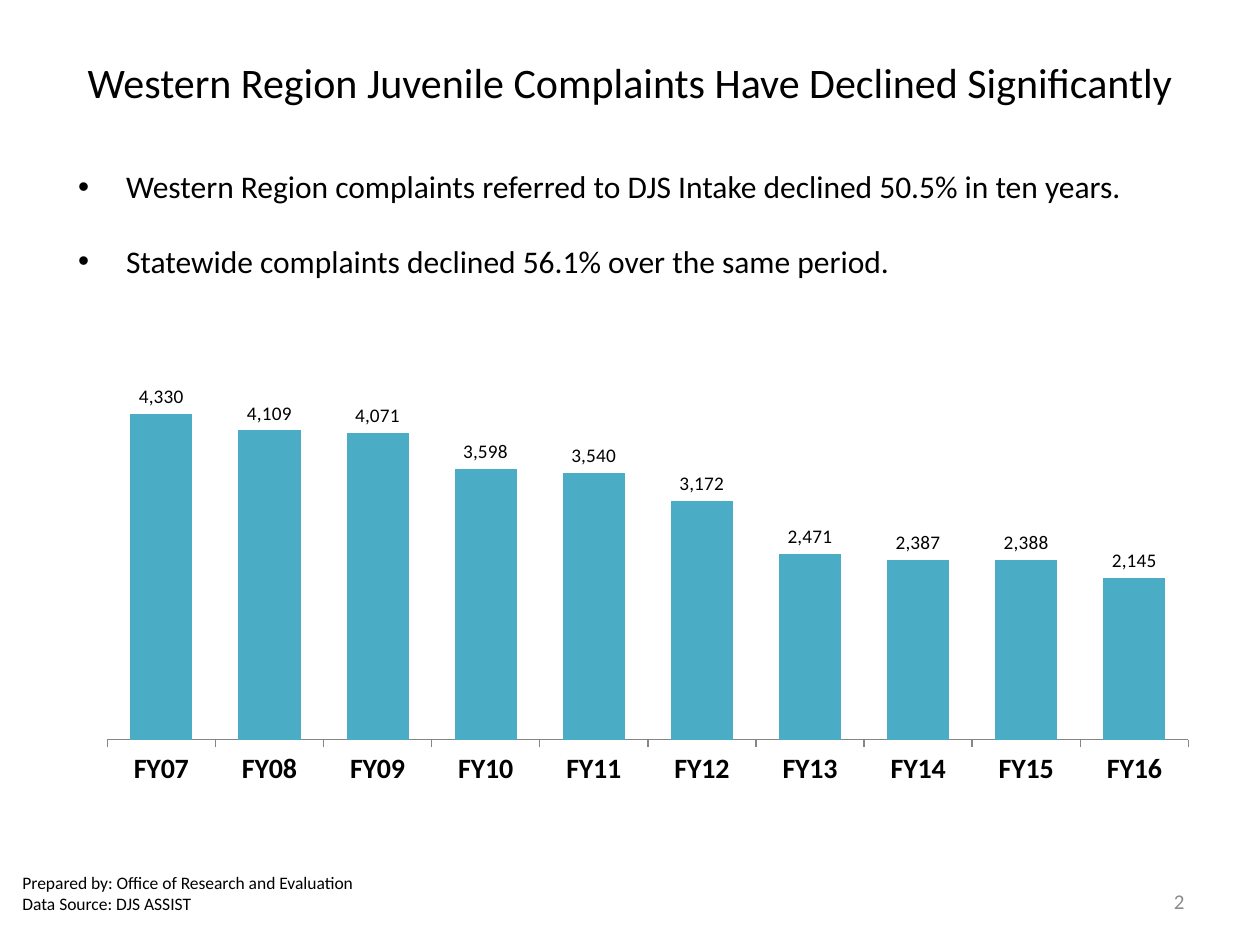
from dataclasses import dataclass

from pptx import Presentation
from pptx.chart.data import CategoryChartData
from pptx.dml.color import RGBColor
from pptx.enum.chart import XL_CHART_TYPE, XL_LABEL_POSITION, XL_TICK_LABEL_POSITION, XL_TICK_MARK
from pptx.enum.text import MSO_ANCHOR, MSO_AUTO_SIZE, PP_ALIGN
from pptx.oxml import parse_xml
from pptx.oxml.ns import nsdecls
from pptx.util import Inches, Pt

COLUMN = XL_CHART_TYPE.COLUMN_CLUSTERED
OUTSIDE_END = XL_LABEL_POSITION.OUTSIDE_END
TICK_OUT, TICK_NONE = XL_TICK_MARK.OUTSIDE, XL_TICK_MARK.NONE
LABELS_LOW = XL_TICK_LABEL_POSITION.LOW
MIDDLE = MSO_ANCHOR.MIDDLE
NO_FIT = MSO_AUTO_SIZE.NONE
LEFT, CENTER, RIGHT = PP_ALIGN.LEFT, PP_ALIGN.CENTER, PP_ALIGN.RIGHT

WIDTH, HEIGHT = Inches(10), Inches(7.5)
FONT = "Calibri"
COLORS = {"text": "000000", "number": "8C8C8C", "bar": "4BACC6", "axis": "868686"}
NUMBER_FORMAT = '_(* #,##0_);_(* \\(#,##0\\);_(* "-"??_);_('
COMPLAINTS = {
    "FY16": 2145, "FY15": 2388, "FY14": 2387, "FY13": 2471, "FY12": 3172,
    "FY11": 3540, "FY10": 3598, "FY09": 4071, "FY08": 4109, "FY07": 4330,
}


@dataclass(frozen=True)
class Area:
    """Left, top, width and height as shares of the slide's size."""
    x: float
    y: float
    w: float
    h: float

    def box(self) -> tuple[int, int, int, int]:
        return (int(self.x * WIDTH), int(self.y * HEIGHT),
                int(self.w * WIDTH), int(self.h * HEIGHT))


@dataclass(frozen=True)
class TextBlock:
    area: Area
    lines: tuple[str, ...]
    size: int
    align: PP_ALIGN = LEFT
    color: str = "text"
    gap: int = 0
    hanging: float = 0


TITLE = TextBlock(Area(0, 0.04, 1, 0.093),
                  ("Western Region Juvenile Complaints Have Declined Significantly",),
                  24, CENTER)
BULLETS = TextBlock(Area(0.052, 0.148, 0.908, 0.177),
                    ("Western Region complaints referred to DJS Intake declined 50.5% in ten years.",
                     "Statewide complaints declined 56.1% over the same period."),
                    18, gap=21, hanging=0.38)
PAGE_NUMBER = TextBlock(Area(0.717, 0.927, 0.233, 0.053), ("2",), 12, RIGHT, "number")
SOURCE = TextBlock(Area(0.008, 0.911, 0.292, 0.069),
                   ("Prepared by: Office of Research and Evaluation",
                    "Data Source:\u00a0DJS ASSIST"), 10)
CHART_AREA = Area(0.067, 0.356, 0.908, 0.489)
PLOT = {"x": 0.02, "y": 0.058, "w": 0.945, "h": 0.815}


def rgb(name: str) -> RGBColor:
    return RGBColor.from_string(COLORS[name])


def set_format(target, values: dict) -> None:
    for name, value in values.items():
        setattr(target, name, value)


def set_font(font, size: int, color: str = "text", bold: bool = False) -> None:
    set_format(font, {"name": FONT, "size": Pt(size), "bold": bold})
    font.color.rgb = rgb(color)


def write_text(sp, block: TextBlock) -> None:
    sp.left, sp.top, sp.width, sp.height = block.area.box()
    tf = sp.text_frame
    set_format(tf, {"word_wrap": True, "auto_size": NO_FIT, "vertical_anchor": MIDDLE})
    for i, line in enumerate(block.lines):
        p = tf.add_paragraph() if i else tf.paragraphs[0]
        set_format(p, {"alignment": block.align, "space_before": Pt(block.gap if i else 0)})
        if block.hanging:
            pPr = p._p.get_or_add_pPr()
            pPr.set("marL", str(Inches(block.hanging)))
            pPr.set("indent", str(-Inches(block.hanging)))
        r = p.add_run()
        r.text = line
        set_font(r.font, block.size, block.color)


def set_plot_layout(chart) -> None:
    """Fix the inner plot area at its shares of the chart."""
    sizes = "".join(f'<c:{k}Mode val="edge"/>' for k in "xy")
    sizes += "".join(f'<c:{k} val="{v}"/>' for k, v in PLOT.items())
    area = chart._chartSpace.chart.plotArea
    for old in area.findall("{*}layout"):
        area.remove(old)
    area.insert(0, parse_xml(
        f'<c:layout {nsdecls("c")}><c:manualLayout><c:layoutTarget val="inner"/>'
        f'{sizes}</c:manualLayout></c:layout>'))


def add_complaints_chart(slide) -> None:
    data = CategoryChartData()
    data.categories = list(COMPLAINTS)
    data.add_series("Series 1", list(COMPLAINTS.values()))
    chart = slide.shapes.add_chart(COLUMN, *CHART_AREA.box(), data).chart
    set_format(chart, {"has_legend": False, "has_title": False})
    set_font(chart.font, 10)
    set_plot_layout(chart)

    set_format(chart.value_axis, {
        "visible": False, "has_major_gridlines": False,
        "minimum_scale": 0, "maximum_scale": 5000})
    years = chart.category_axis
    set_format(years, {
        "reverse_order": True, "major_tick_mark": TICK_OUT,
        "minor_tick_mark": TICK_NONE, "tick_label_position": LABELS_LOW})
    set_font(years.tick_labels.font, 16, bold=True)
    years.format.line.color.rgb = rgb("axis")

    plot = chart.plots[0]
    set_format(plot, {"gap_width": 74, "overlap": 52, "vary_by_categories": False})
    series = plot.series[0]
    series.format.fill.solid()
    series.format.fill.fore_color.rgb = rgb("bar")
    labels = series.data_labels
    set_format(labels, {
        "show_value": True, "position": OUTSIDE_END,
        "number_format": NUMBER_FORMAT, "number_format_is_linked": False})
    set_font(labels.font, 11)


def main() -> None:
    prs = Presentation()
    prs.slide_width, prs.slide_height = WIDTH, HEIGHT
    slide = prs.slides.add_slide(prs.slide_layouts[1])
    write_text(slide.shapes.title, TITLE)
    write_text(slide.placeholders[1], BULLETS)
    for block in (PAGE_NUMBER, SOURCE):
        write_text(slide.shapes.add_textbox(*block.area.box()), block)
    add_complaints_chart(slide)
    prs.save("out.pptx")


if __name__ == "__main__":
    main()
